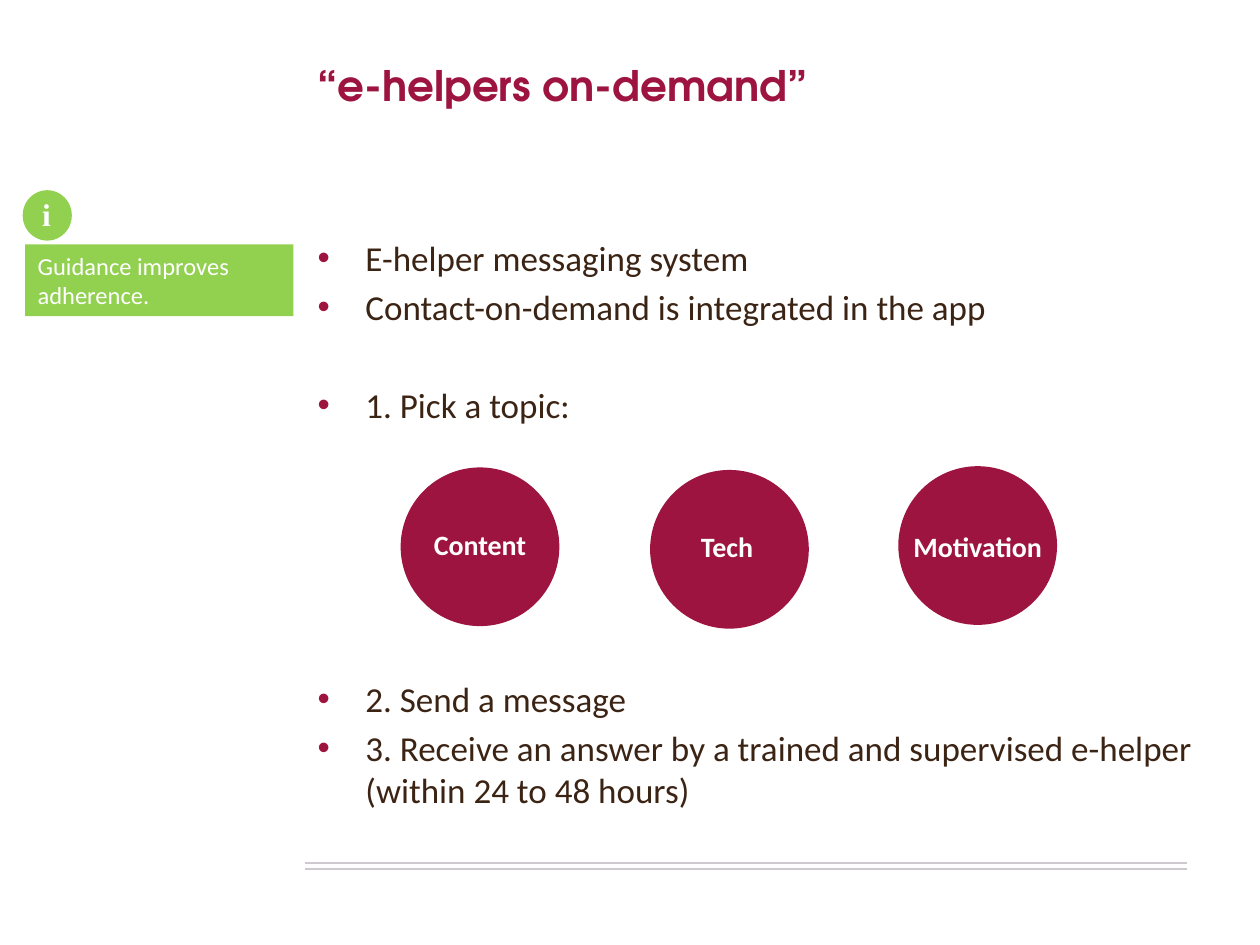
import pptx
import pptx.util
import pptx.dml.color
import pptx.enum.shapes
import pptx.enum.text
import pptx.oxml
import pptx.oxml.ns

Inches, Pt = pptx.util.Inches, pptx.util.Pt
Shape = pptx.enum.shapes.MSO_SHAPE
Align = pptx.enum.text.PP_ALIGN

WINE, GREEN, BROWN, GREY, WHITE = "9E1440", "92D050", "3C2415", "CEC9CE", "FFFFFF"
TITLE = "“e-helpers on-demand”"
STEPS = [
    ("E-helper messaging system", 0),
    ("Contact-on-demand is integrated in the app", 4),
    ("1. Pick a topic:", 32),
    ("2. Send a message", 144),
    ("3. Receive an answer by a trained and supervised e-helper (within 24 to 48 hours)", 4),
]
TOPICS = [
    ("Content", 3.18, 3.71, 3.18, 4.14),
    ("Tech", 5.16, 3.73, 5.14, 4.15),
    ("Motivation", 7.13, 3.7, 7.13, 4.15),
]
SIZE = 1.26
RULES = [6.85, 6.9]
TIP = "Guidance improves adherence."


def color(code):
    return pptx.dml.color.RGBColor.from_string(code)


def place(item, *box):
    item.left, item.top, item.width, item.height = map(Inches, box)


def bullet(para, code):
    props = para._p.get_or_add_pPr()
    props.set("marL", str(Inches(0.38)))
    props.set("indent", str(-Inches(0.38)))
    space = pptx.oxml.ns.nsdecls("a")
    for xml in (
        f'<a:buClr {space}><a:srgbClr val="{code}"/></a:buClr>',
        f'<a:buFont {space} typeface="Arial"/>',
        f'<a:buChar {space} char="•"/>',
    ):
        props.append(pptx.oxml.parse_xml(xml))


def write(frame, text, size=16, font="Calibri", fill=WHITE, bold=False,
          align=Align.LEFT, wrap=True, before=0, mark=None, first=True):
    frame.word_wrap = wrap
    frame.auto_size = pptx.enum.text.MSO_AUTO_SIZE.NONE
    frame.vertical_anchor = pptx.enum.text.MSO_ANCHOR.TOP
    para = frame.paragraphs[0] if first else frame.add_paragraph()
    para.alignment = align
    para.space_before = Pt(before)
    if mark:
        bullet(para, mark)
    run = para.add_run()
    run.text = text
    run.font.size, run.font.name, run.font.bold = Pt(size), font, bold
    run.font.color.rgb = color(fill)


def draw(slide, kind, box, fill):
    item = slide.shapes.add_shape(kind, *map(Inches, box))
    item.shadow.inherit = False
    item.fill.solid()
    item.fill.fore_color.rgb = color(fill)
    item.line.fill.background()
    return item


def label(slide, box, text, **style):
    item = slide.shapes.add_textbox(*map(Inches, box))
    write(item.text_frame, text, **style)


def rule(slide, y):
    line = slide.shapes.add_connector(
        pptx.enum.shapes.MSO_CONNECTOR.STRAIGHT,
        Inches(2.42), Inches(y), Inches(9.42), Inches(y))
    line.line.color.rgb = color(GREY)
    line.line.width = Pt(1.25)
    pptx.oxml.ns.qn("a:effectLst")
    line._element.spPr.append(pptx.oxml.parse_xml(
        f'<a:effectLst {pptx.oxml.ns.nsdecls("a")}/>'))


def main():
    deck = pptx.Presentation()
    deck.slide_width, deck.slide_height = Inches(10), Inches(7.5)
    slide = deck.slides.add_slide(deck.slide_layouts[1])
    for y in RULES:
        rule(slide, y)

    title, body = slide.shapes.title, slide.placeholders[1]
    place(title, 2.42, 0.42, 7, 1.08)
    write(title.text_frame, TITLE, size=24, font="TeX Gyre Adventor", fill=WINE, bold=True)
    place(body, 2.42, 1.83, 7.23, 4.67)
    for i, (text, gap) in enumerate(STEPS):
        write(body.text_frame, text, size=20, fill=BROWN, before=gap, mark=WINE, first=i == 0)

    for text, x, y, left, top in TOPICS:
        draw(slide, Shape.OVAL, (x, y, SIZE, SIZE), WINE)
        label(slide, (left, top, SIZE, 0.37), text, bold=True, align=Align.CENTER)

    tip = draw(slide, Shape.RECTANGLE, (0.2, 1.94, 2.13, 0.57), GREEN)
    write(tip.text_frame, TIP, size=14)
    draw(slide, Shape.OVAL, (0.18, 1.51, 0.39, 0.4), GREEN)
    label(slide, (0.25, 1.5, 0.24, 0.4), "i", size=18, font="Times New Roman",
          bold=True, align=Align.CENTER, wrap=False)
    deck.save("out.pptx")


if __name__ == "__main__":
    main()
